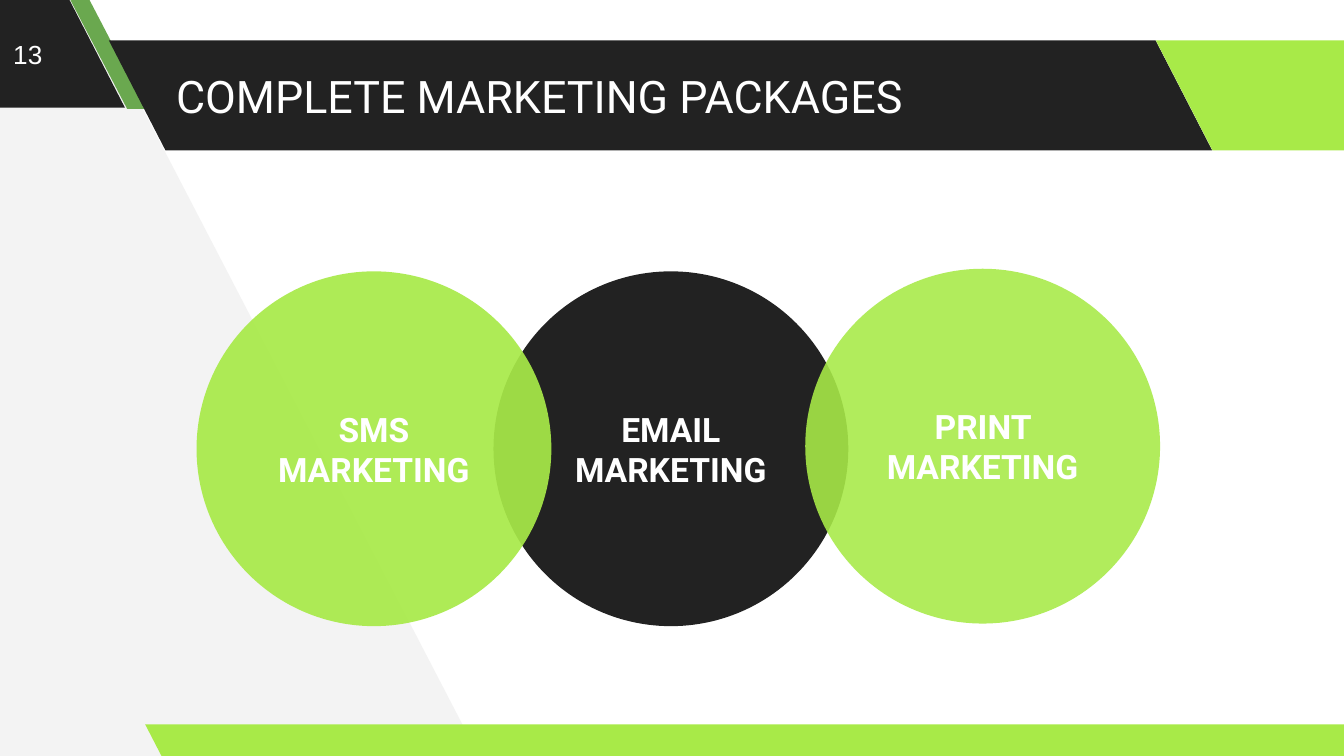
from dataclasses import dataclass

from lxml import etree
from pptx import Presentation
from pptx.dml.color import RGBColor
from pptx.enum import shapes as kinds, text as txt
from pptx.oxml import ns
from pptx.util import Pt


@dataclass(frozen=True)
class Theme:
    """Colours, fonts and type sizes."""
    dark: str = "222222"
    lime: str = "A8EA48"
    green: str = "6AA84F"
    pale: str = "F3F3F3"
    white: str = "FFFFFF"
    font: str = "Roboto"
    plain: str = "Arial"
    head: int = 24
    body: int = 18
    small: int = 14


THEME = Theme()
SLANT = 0.515


def paint(shape, color, alpha=100):
    """Fill a shape flat, with no line or shadow."""
    shape.shadow.inherit = False
    shape.line.fill.background()
    shape.fill.solid()
    shape.fill.fore_color.rgb = RGBColor.from_string(color)
    if alpha < 100:
        tone = shape.fill._xPr.find(".//" + ns.qn("a:srgbClr"))
        etree.SubElement(tone, ns.qn("a:alpha"), val=str(alpha * 1000))


def write(shape, words, size, font=THEME.font, bold=False, align=txt.PP_ALIGN.LEFT):
    """Set white text, centred in height, inside a shape."""
    frame = shape.text_frame
    frame.text = words
    frame.word_wrap = True
    frame.auto_size = txt.MSO_AUTO_SIZE.NONE
    frame.vertical_anchor = txt.MSO_ANCHOR.MIDDLE
    frame.margin_left = frame.margin_right = Pt(7.2)
    frame.margin_top = frame.margin_bottom = Pt(7.2)
    para = frame.paragraphs[0]
    para.alignment = align
    for run in para.runs:
        run.font.name = font
        run.font.size = Pt(size)
        run.font.bold = bold
        run.font.color.rgb = RGBColor.from_string(THEME.white)


def band(slide, box, color, slant=SLANT):
    """Draw a band whose ends lean to the left."""
    shape = slide.shapes.add_shape(kinds.MSO_SHAPE.PARALLELOGRAM, *map(Pt, box))
    shape.adjustments[0] = slant
    shape._element.spPr.find(ns.qn("a:xfrm")).set("flipH", "1")
    paint(shape, color)


def wedge(slide, box):
    """Draw the pale slanted panel on the left."""
    x, y, w, h = box
    pen = slide.shapes.build_freeform(Pt(x + w), Pt(y + h - 2.9))
    pen.add_line_segments([(Pt(x + 49), Pt(y)), (Pt(x), Pt(y)),
                           (Pt(x + 2.9), Pt(y + h))])
    paint(pen.convert_to_shape(), THEME.pale)


def header(slide, box, words, number):
    """Place the title bar with its slanted ends and page number."""
    x, y, w, h = box
    band(slide, (x - 71.3, y - 1.4, 138.2, h), THEME.dark)
    band(slide, (x + 37.4, y - 0.7, 41, h), THEME.green, 0.75)
    band(slide, (x + 58.3, y + 21.6, 591.1, h), THEME.dark)
    band(slide, (x + w - 100.8, y + 21.6, 138.2, h), THEME.lime)
    title = slide.shapes.title
    title.left, title.top = Pt(x + 87.1), Pt(y + 21.6)
    title.width, title.height = Pt(529.2), Pt(h)
    slide.shapes._spTree.append(title._element)
    write(title, words, THEME.head)
    page = slide.shapes.add_textbox(Pt(x), Pt(y), Pt(46.8), Pt(57.6))
    write(page, number, THEME.small, THEME.plain)


def circles(slide, box):
    """Place the three overlapping package circles."""
    x, y, w, h = box
    items = [("EMAIL MARKETING", 159.1, 1.4, THEME.dark, 100),
             ("SMS MARKETING", 0, 1.4, THEME.lime, 92),
             ("PRINT MARKETING", w - h, 0, THEME.lime, 89)]
    for words, dx, dy, color, alpha in items:
        disc = slide.shapes.add_shape(
            kinds.MSO_SHAPE.OVAL, Pt(x + dx), Pt(y + dy), Pt(h), Pt(h))
        paint(disc, color, alpha)
        write(disc, words, THEME.body, bold=True, align=txt.PP_ALIGN.CENTER)


def main():
    """Build and save the slide."""
    deck = Presentation()
    deck.slide_width, deck.slide_height = Pt(720), Pt(405)
    slide = deck.slides.add_slide(deck.slide_layouts[5])
    wedge(slide, (-4.3, -2.9, 260.6, 410.4))
    band(slide, (77.8, 388.1, 658.8, 18), THEME.lime)
    header(slide, (0, 0, 720, 59), "COMPLETE MARKETING PACKAGES", "13")
    circles(slide, (105.3, 144, 516.2, 190.1))
    deck.save("out.pptx")


if __name__ == "__main__":
    main()
